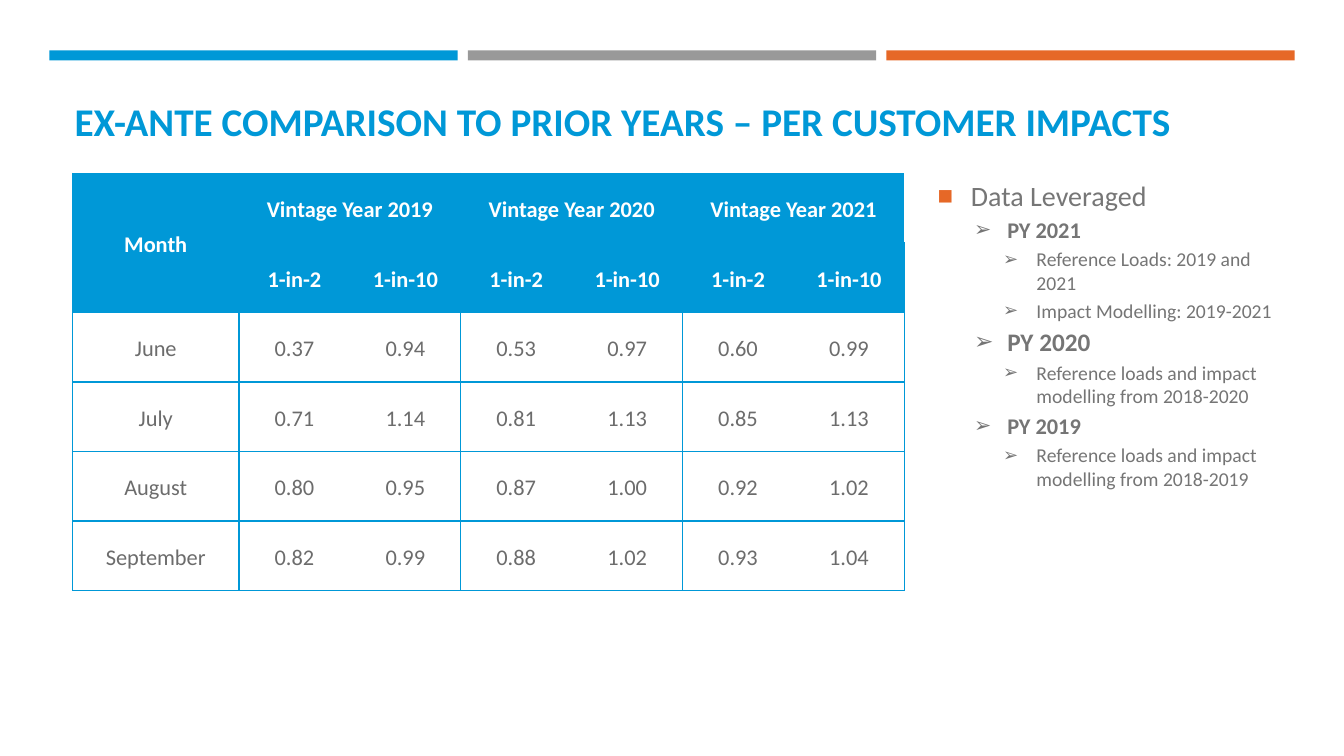
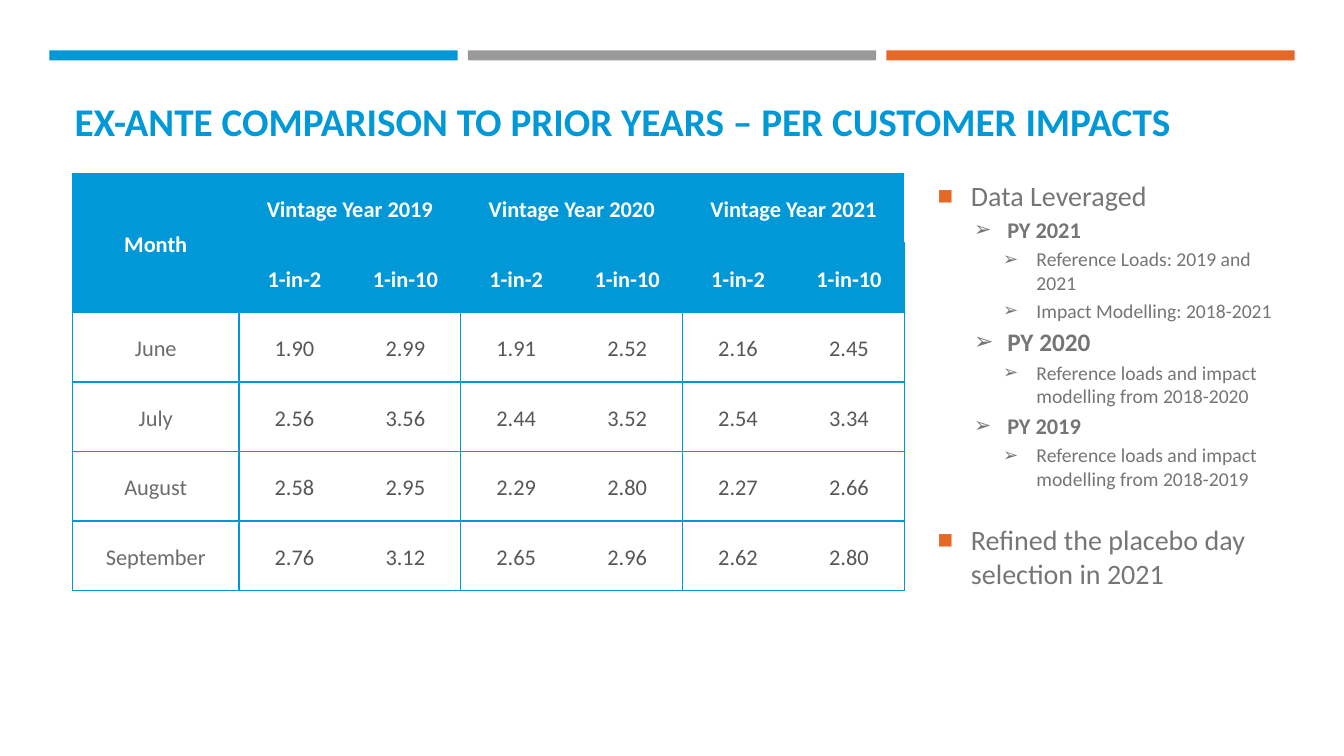
from lxml.etree import SubElement
from pptx import Presentation
from pptx.dml.color import RGBColor
from pptx.enum.shapes import MSO_SHAPE
from pptx.enum.text import MSO_ANCHOR, MSO_AUTO_SIZE, PP_ALIGN
from pptx.oxml.ns import qn
from pptx.util import Inches, Pt

COLORS = {
    "blue": "0098D7",
    "gray": "999999",
    "orange": "E66827",
    "white": "FFFFFF",
    "month": "6C6C6C",
    "dark value": "575757",
    "topic": "767676",
    "detail": "757575",
}
FONT = "Calibri"
TITLE = "EX-ANTE COMPARISON TO PRIOR YEARS – PER CUSTOMER IMPACTS"
YEARS = (2019, 2020, 2021)
MONTHS = ("June", "July", "August", "September")
LEVEL_INDENTS = (0.33, 0.69, 0.98)
HANGING = 0.33

SMALL_IMPACTS = (
    (0.37, 0.94, 0.53, 0.97, 0.60, 0.99),
    (0.71, 1.14, 0.81, 1.13, 0.85, 1.13),
    (0.80, 0.95, 0.87, 1.00, 0.92, 1.02),
    (0.82, 0.99, 0.88, 1.02, 0.93, 1.04),
)
LARGE_IMPACTS = (
    (1.90, 2.99, 1.91, 2.52, 2.16, 2.45),
    (2.56, 3.56, 2.44, 3.52, 2.54, 3.34),
    (2.58, 2.95, 2.29, 2.80, 2.27, 2.66),
    (2.76, 3.12, 2.65, 2.96, 2.62, 2.80),
)


def color(name):
    return RGBColor.from_string(COLORS[name])


def format_runs(paragraph, size, color_name, bold=False):
    for run in paragraph.runs:
        run.font.name = FONT
        run.font.size = Pt(size)
        run.font.bold = bold
        run.font.color.rgb = color(color_name)


def place(shape, left, top, width, height):
    shape.left, shape.top = Inches(left), Inches(top)
    shape.width, shape.height = Inches(width), Inches(height)


def set_up_layout(layout):
    title, body = layout.placeholders[0], layout.placeholders[1]
    place(title, 0.64, 0.77, 12.06, 0.71)
    place(body, 9.2, 1.72, 3.73, 5.55)


def move_bands_to_layout(slide):
    for index, name in enumerate(("blue", "gray", "orange")):
        band = slide.shapes.add_shape(
            MSO_SHAPE.RECTANGLE, Inches(0.49 + 4.15 * index), Inches(0.5),
            Inches(4.05), Inches(0.1))
        band.shadow.inherit = False
        band.fill.solid()
        band.fill.fore_color.rgb = color(name)
        band.line.fill.background()
        slide.slide_layout.shapes.element.append(band.element)


def fill_title(slide):
    text_frame = slide.shapes.title.text_frame
    text_frame.text = TITLE
    text_frame.vertical_anchor = MSO_ANCHOR.BOTTOM
    text_frame.auto_size = MSO_AUTO_SIZE.NONE
    paragraph = text_frame.paragraphs[0]
    paragraph.alignment = PP_ALIGN.LEFT
    format_runs(paragraph, 28, "blue", bold=True)


def set_borders(cell, column):
    visible = {
        "a:lnL": column == 0 or column % 2 == 1,
        "a:lnR": column % 2 == 0,
        "a:lnT": True,
        "a:lnB": True,
    }
    properties = cell._tc.get_or_add_tcPr()
    for tag, shown in visible.items():
        line = SubElement(properties, qn(tag), w=str(Pt(1)))
        if shown:
            fill = SubElement(line, qn("a:solidFill"))
            SubElement(fill, qn("a:srgbClr"), val=COLORS["blue"])
        else:
            SubElement(line, qn("a:noFill"))


def format_cell(cell, column, text, color_name, header):
    set_borders(cell, column)
    if header:
        cell.fill.solid()
        cell.fill.fore_color.rgb = color("blue")
    else:
        cell.fill.background()
    cell.margin_left = cell.margin_right = Inches(0.07)
    cell.margin_top = cell.margin_bottom = 0
    cell.vertical_anchor = MSO_ANCHOR.MIDDLE
    cell.text_frame.text = text
    paragraph = cell.text_frame.paragraphs[0]
    paragraph.alignment = PP_ALIGN.CENTER
    paragraph.line_spacing = 1.15
    format_runs(paragraph, 16, color_name, bold=header)


def add_impact_table(slide, impacts, value_color):
    rows = [["Month"], [""]]
    for year in YEARS:
        rows[0] += [f"Vintage Year {year}", ""]
        rows[1] += ["1-in-2", "1-in-10"]
    for month, values in zip(MONTHS, impacts):
        rows.append([month] + [f"{value:.2f}" for value in values])

    table = slide.shapes.add_table(
        len(rows), len(rows[0]), Inches(0.72), Inches(1.72),
        Inches(8.27), Inches(4.14)).table
    table.first_row = table.horz_banding = False
    for index, column in enumerate(table.columns):
        column.width = Inches(1.1 if index else 1.65)
    for row in table.rows:
        row.height = Inches(0.69)

    for row_index, texts in enumerate(rows):
        header = row_index < 2
        for column_index, text in enumerate(texts):
            body_color = value_color if column_index else "month"
            format_cell(table.cell(row_index, column_index), column_index,
                        text, "white" if header else body_color, header)
    table.cell(0, 0).merge(table.cell(1, 0))
    for column_index in range(1, len(rows[0]), 2):
        table.cell(0, column_index).merge(table.cell(0, column_index + 1))


def set_bullet(paragraph, level):
    properties = paragraph._p.get_or_add_pPr()
    properties.set("marL", str(Inches(LEVEL_INDENTS[level])))
    properties.set("indent", str(-Inches(HANGING)))
    bullet_color = SubElement(properties, qn("a:buClr"))
    SubElement(bullet_color, qn("a:srgbClr"),
               val=COLORS["detail" if level else "orange"])
    SubElement(properties, qn("a:buSzPct"), val="92000")
    SubElement(properties, qn("a:buChar"), char="➢" if level else "■")


def fill_body(slide, items):
    text_frame = slide.placeholders[1].text_frame
    text_frame.auto_size = MSO_AUTO_SIZE.NONE
    text_frame.text = "\n".join(text for level, size, text in items)
    for index, (level, size, text) in enumerate(items):
        paragraph = text_frame.paragraphs[index]
        set_bullet(paragraph, level)
        paragraph.level = level
        paragraph.space_before = Pt(20 if index and level == 0 else 0)
        paragraph.space_after = Pt(3)
        format_runs(paragraph, size, "detail" if level else "topic",
                    bold=level == 1)


def data_items(modelling_years):
    return [
        (0, 20, "Data Leveraged"),
        (1, 16, "PY 2021"),
        (2, 14, "Reference Loads: 2019 and 2021"),
        (2, 14, f"Impact Modelling: {modelling_years}"),
        (1, 18, "PY 2020"),
        (2, 14, "Reference loads and impact modelling from 2018-2020"),
        (1, 16, "PY 2019"),
        (2, 14, "Reference loads and impact modelling from 2018-2019"),
    ]


def add_comparison_slide(presentation, layout, impacts, value_color, items):
    slide = presentation.slides.add_slide(layout)
    fill_title(slide)
    add_impact_table(slide, impacts, value_color)
    fill_body(slide, items)
    return slide


def main():
    presentation = Presentation()
    presentation.slide_width = Inches(13.33)
    presentation.slide_height = Inches(7.5)
    layout = presentation.slide_layouts[1]
    set_up_layout(layout)

    first_slide = add_comparison_slide(
        presentation, layout, SMALL_IMPACTS, "month", data_items("2019-2021"))
    move_bands_to_layout(first_slide)

    refinement = (0, 20, "Refined the placebo day selection in 2021")
    add_comparison_slide(
        presentation, layout, LARGE_IMPACTS, "dark value",
        data_items("2018-2021") + [refinement])

    presentation.save("out.pptx")


if __name__ == "__main__":
    main()
